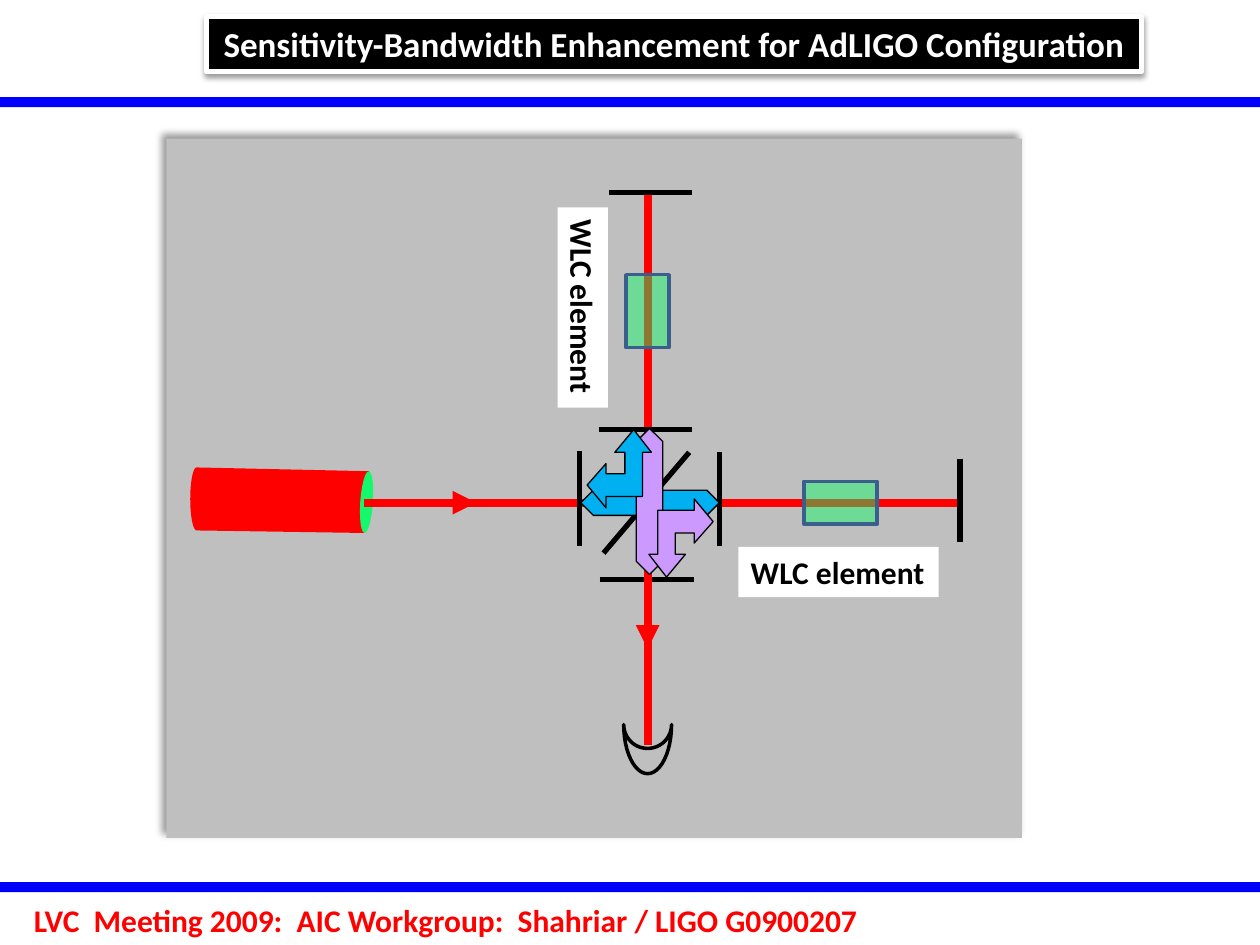
from dataclasses import dataclass
from math import cos, pi, sin

from lxml import etree
from pptx import Presentation
from pptx.dml.color import RGBColor
from pptx.enum.shapes import MSO_CONNECTOR, MSO_SHAPE
from pptx.enum.text import MSO_ANCHOR, MSO_AUTO_SIZE, PP_ALIGN
from pptx.oxml.ns import qn
from pptx.util import Inches, Pt

BLACK, WHITE, RED, BLUE = "000000", "FFFFFF", "FF0000", "0000FF"
GREEN, SKY, LILAC = "14F86B", "00B0F0", "CC99FF"


@dataclass(frozen=True)
class Line:
    start: tuple[float, float]
    end: tuple[float, float]
    color: str = BLACK
    width: float = 3
    arrow: bool = False


@dataclass(frozen=True)
class Shadow:
    alpha: int
    blur: float
    distance: float
    direction: int


def rgb(color: str) -> RGBColor:
    return RGBColor.from_string(color)


def add_element(parent, tag: str, **attributes):
    return etree.SubElement(parent, qn(tag), {key: str(value) for key, value in attributes.items()})


def style(shape, fill=None, line=None, line_width=0.75, alpha=None) -> None:
    """Set fill, outline and fill opacity in percent."""
    shape.shadow.inherit = False
    if fill:
        shape.fill.solid()
        shape.fill.fore_color.rgb = rgb(fill)
        if alpha:
            color = shape._element.spPr.find(qn("a:solidFill"))[0]
            add_element(color, "a:alpha", val=alpha * 1000)
    else:
        shape.fill.background()
    if line:
        shape.line.color.rgb = rgb(line)
        shape.line.width = Pt(line_width)
    else:
        shape.line.fill.background()


def add_shadow(shape, shadow: Shadow) -> None:
    effects = shape._element.spPr.find(qn("a:effectLst"))
    outer = add_element(effects, "a:outerShdw", blurRad=Pt(shadow.blur), dist=Pt(shadow.distance),
                        dir=shadow.direction * 60000, algn="ctr", rotWithShape=0)
    color = add_element(outer, "a:srgbClr", val=BLACK)
    add_element(color, "a:alpha", val=shadow.alpha * 1000)


def add_preset(slide, kind, left, top, width, height, rotation=0, adjustments=(), **look):
    shape = slide.shapes.add_shape(kind, Inches(left), Inches(top), Inches(width), Inches(height))
    shape.rotation = rotation
    for index, value in enumerate(adjustments):
        shape.adjustments[index] = value
    style(shape, **look)
    return shape


def add_outline(slide, points: list[tuple[float, float]], **look):
    corners = [(Inches(x), Inches(y)) for x, y in points]
    builder = slide.shapes.build_freeform(*corners[0])
    builder.add_line_segments(corners[1:], close=True)
    shape = builder.convert_to_shape()
    style(shape, **look)
    return shape


def add_line(slide, line: Line) -> None:
    connector = slide.shapes.add_connector(
        MSO_CONNECTOR.STRAIGHT, *(Inches(value) for value in line.start + line.end))
    connector.line.color.rgb = rgb(line.color)
    connector.line.width = Pt(line.width)
    if line.arrow:
        add_element(connector.line._get_or_add_ln(), "a:tailEnd", type="triangle")
    add_element(connector._element.spPr, "a:effectLst")


def write(shape, text: str, size=18, color=BLACK, align=PP_ALIGN.LEFT) -> None:
    frame = shape.text_frame
    frame.word_wrap = False
    frame.auto_size = MSO_AUTO_SIZE.SHAPE_TO_FIT_TEXT
    frame.vertical_anchor = MSO_ANCHOR.TOP
    paragraph = frame.paragraphs[0]
    paragraph.alignment = align
    run = paragraph.add_run()
    run.text = text
    run.font.name = "Calibri"
    run.font.size = Pt(size)
    run.font.bold = True
    run.font.color.rgb = rgb(color)


def half_ellipse(center_x, center_y, radius_x, radius_y, start, end, steps=24):
    angles = [start + (end - start) * step / steps for step in range(steps + 1)]
    return [(center_x + radius_x * cos(angle), center_y + radius_y * sin(angle)) for angle in angles]


def add_laser(slide) -> None:
    back_end = half_ellipse(1.56, 3.96, 0.05, 0.25, pi / 2, 3 * pi / 2)
    add_outline(slide, back_end + [(2.93, 3.74), (2.89, 4.23)], fill=RED)
    add_preset(slide, MSO_SHAPE.OVAL, 2.86, 3.74, 0.1, 0.49, rotation=4, fill=GREEN)


def add_detector(slide) -> None:
    outer = half_ellipse(5.14, 5.75, 0.19, 0.39, pi, 0)
    inner = half_ellipse(5.14, 5.75, 0.19, 0.19, 0, pi)
    add_outline(slide, outer + inner[1:-1], line=BLACK, line_width=2)


def add_recycling_arrows(slide) -> None:
    for left, top, width, height, rotation, fill in (
            (5.06, 3.44, 0.2, 1.1, 270, SKY), (5.05, 3.4, 0.21, 1.16, 0, LILAC)):
        add_preset(slide, MSO_SHAPE.UP_DOWN_ARROW, left, top, width, height, rotation,
                   (0.5, 1.09), fill=fill, line=BLACK)
    bent_arrow = [(5.03, 3.41), (4.88, 3.59), (4.96, 3.59), (4.96, 3.76), (4.81, 3.76), (4.81, 3.68),
                  (4.66, 3.85), (4.81, 4.03), (4.81, 3.94), (5.1, 3.94), (5.1, 3.59), (5.17, 3.59)]
    half_turn = [(10.32 - x, 7.99 - y) for x, y in bent_arrow]
    add_outline(slide, half_turn, fill=LILAC, line=BLACK)
    add_outline(slide, bent_arrow, fill=SKY, line=BLACK)


def main() -> None:
    presentation = Presentation()
    presentation.slide_width, presentation.slide_height = Inches(10), Inches(7.5)
    slide = presentation.slides.add_slide(presentation.slide_layouts[6])

    for top in (0.77, 7):
        add_preset(slide, MSO_SHAPE.RECTANGLE, 0, top, 10, 0.08, fill=BLUE)
    footer = slide.shapes.add_textbox(Inches(0.17), Inches(7.1), Inches(6.81), Inches(0.4))
    write(footer, "LVC  Meeting 2009:  AIC Workgroup:  Shahriar / LIGO G0900207", color=RED)

    panel = add_preset(slide, MSO_SHAPE.RECTANGLE, 1.32, 1.1, 6.79, 5.55, fill="BFBFBF")
    add_shadow(panel, Shadow(40, 4, 3, 225))
    add_laser(slide)

    mirrors_below_beam = [
        Line((4.76, 4.6), (5.51, 4.6)),
        Line((4.6, 3.58), (4.6, 4.33)),
        Line((7.62, 3.64), (7.62, 4.3)),
        Line((5.47, 3.59), (4.79, 4.39)),
    ]
    beams = [
        Line((2.89, 3.99), (7.63, 3.99), RED, 4.5),
        Line((5.14, 5.91), (5.14, 1.52), RED, 4.5),
    ]
    mirrors_above_beam = [
        Line((5.71, 3.59), (5.71, 4.33)),
        Line((4.75, 3.41), (5.49, 3.41)),
    ]
    beam_directions = [
        Line((3.33, 3.99), (3.78, 3.99), RED, 4.5, arrow=True),
        Line((5.14, 4.7), (5.14, 5.15), RED, 4.5, arrow=True),
    ]
    add_line(slide, beams[0])
    for line in mirrors_below_beam:
        add_line(slide, line)
    add_detector(slide)
    for line in beams[1:] + mirrors_above_beam + beam_directions:
        add_line(slide, line)
    add_recycling_arrows(slide)
    add_line(slide, Line((4.83, 1.53), (5.49, 1.53)))

    for left, top, rotation in ((4.97, 2.18, 0), (6.5, 3.7, 270)):
        add_preset(slide, MSO_SHAPE.RECTANGLE, left, top, 0.34, 0.58, rotation,
                   fill=GREEN, alpha=48, line="3A5F8C", line_width=2)
    for left, top, rotation in ((3.83, 2.24, 90), (5.86, 4.34, 0)):
        label = add_preset(slide, MSO_SHAPE.RECTANGLE, left, top, 1.59, 0.4, rotation, fill=WHITE)
        write(label, "WLC element")

    title = add_preset(slide, MSO_SHAPE.RECTANGLE, 1.64, 0.13, 7.42, 0.44,
                       fill=BLACK, line=WHITE, line_width=3)
    add_shadow(title, Shadow(38, 3.1, 1.6, 90))
    write(title, "Sensitivity-Bandwidth Enhancement for AdLIGO Configuration",
          size=20, color=WHITE, align=PP_ALIGN.CENTER)
    presentation.save("out.pptx")


if __name__ == "__main__":
    main()
